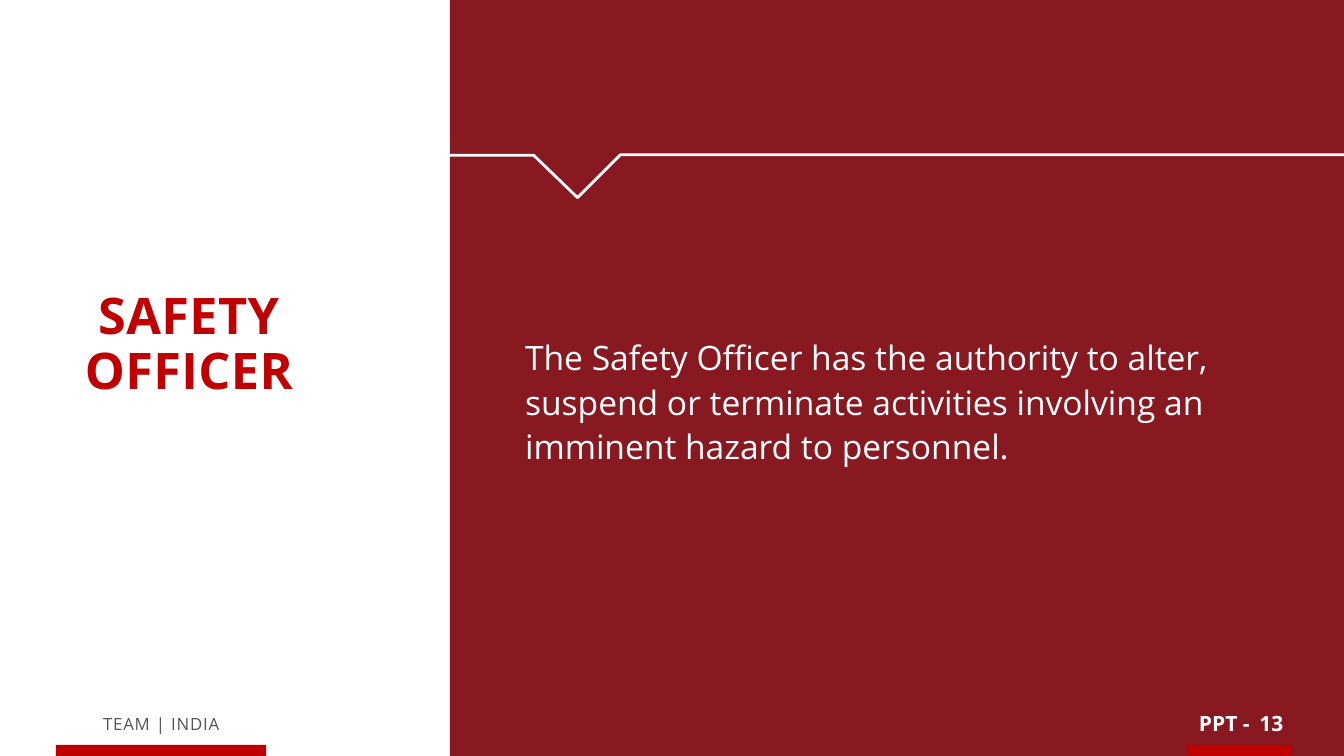
from pptx import Presentation
from pptx.dml.color import RGBColor
from pptx.enum import shapes, text
from pptx.util import Inches, Pt

FONT = "Open Sans"
WHITE = RGBColor(0xFF, 0xFF, 0xFF)
GREY = RGBColor(0x53, 0x53, 0x53)
RED = RGBColor(0xC0, 0x00, 0x00)
MAROON = RGBColor(0x88, 0x19, 0x20)

SLIDE_W, SLIDE_H = 26.67, 15
PANEL_LEFT = 8.93
BAR_H = 0.22
BAR_TOP = SLIDE_H - BAR_H

# left, top, width, height, colour
BLOCKS = [
    (PANEL_LEFT, 0, SLIDE_W - PANEL_LEFT, SLIDE_H, MAROON),
    (1.11, BAR_TOP, 4.17, BAR_H, RED),
    (23.56, BAR_TOP, 2.06, BAR_H, RED),
]
NOTCHED_LINE = [(7.69, 3.08), (10.59, 3.08), (11.46, 3.92), (12.31, 3.07), (27.15, 3.07)]

CENTER, LEFT = text.PP_ALIGN.CENTER, text.PP_ALIGN.LEFT
TEXTS = [
    dict(words="TEAM | INDIA", box=(0.66, 14.08, 5.08, 0.58), size=24, color=GREY, tracking=1.2),
    dict(words="PPT -", box=(23.65, 14.01, 1.29, 0.68), size=30, color=WHITE, bold=True, wrap=False),
    dict(words="13", box=(24.9, 14.01, 0.66, 0.74), size=30, color=WHITE, bold=True, wrap=False),
    dict(words="SAFETY OFFICER", box=(0.64, 5.69, 6.22, 2.35), size=72, color=RED, bold=True,
         tracking=0.6, line_spacing=0.9),
    dict(words="The Safety Officer has the authority to alter, suspend or terminate "
               "activities involving an imminent hazard to personnel.",
         box=(10.36, 6.55, 14.49, 3), size=48, color=WHITE, align=LEFT, inset=0.06,
         line_spacing=1.1),
]


def add_block(slide, left, top, width, height, color):
    block = slide.shapes.add_shape(
        shapes.MSO_SHAPE.RECTANGLE, *map(Inches, (left, top, width, height)))
    block.shadow.inherit = False
    block.fill.solid()
    block.fill.fore_color.rgb = color
    block.line.fill.background()


def add_notched_line(slide, points):
    start, *rest = [(Inches(x), Inches(y)) for x, y in points]
    builder = slide.shapes.build_freeform(*start)
    builder.add_line_segments(rest, close=False)
    line = builder.convert_to_shape()
    line.shadow.inherit = False
    line.fill.background()
    line.line.color.rgb = WHITE
    line.line.width = Pt(4)


def add_text(slide, words, box, size, color, bold=False, align=CENTER, wrap=True,
             inset=0.09, tracking=None, line_spacing=None):
    """Add a one-paragraph text box; tracking is letter spacing in points."""
    frame = slide.shapes.add_textbox(*map(Inches, box)).text_frame
    frame.word_wrap = wrap
    frame.margin_left = frame.margin_right = Inches(inset)
    frame.margin_top = frame.margin_bottom = Inches(inset)
    paragraph = frame.paragraphs[0]
    paragraph.alignment = align
    if line_spacing:
        paragraph.line_spacing = line_spacing
    run = paragraph.add_run()
    run.text = words
    font = paragraph.font
    font.name, font.size, font.bold = FONT, Pt(size), bold
    font.color.rgb = color
    if tracking:
        run._r.get_or_add_rPr().set("spc", str(round(tracking * 100)))


def main():
    prs = Presentation()
    prs.slide_width, prs.slide_height = Inches(SLIDE_W), Inches(SLIDE_H)
    slide = prs.slides.add_slide(prs.slide_layouts[6])
    for block in BLOCKS:
        add_block(slide, *block)
    add_notched_line(slide, NOTCHED_LINE)
    for item in TEXTS:
        add_text(slide, **item)
    prs.save("out.pptx")


if __name__ == "__main__":
    main()
